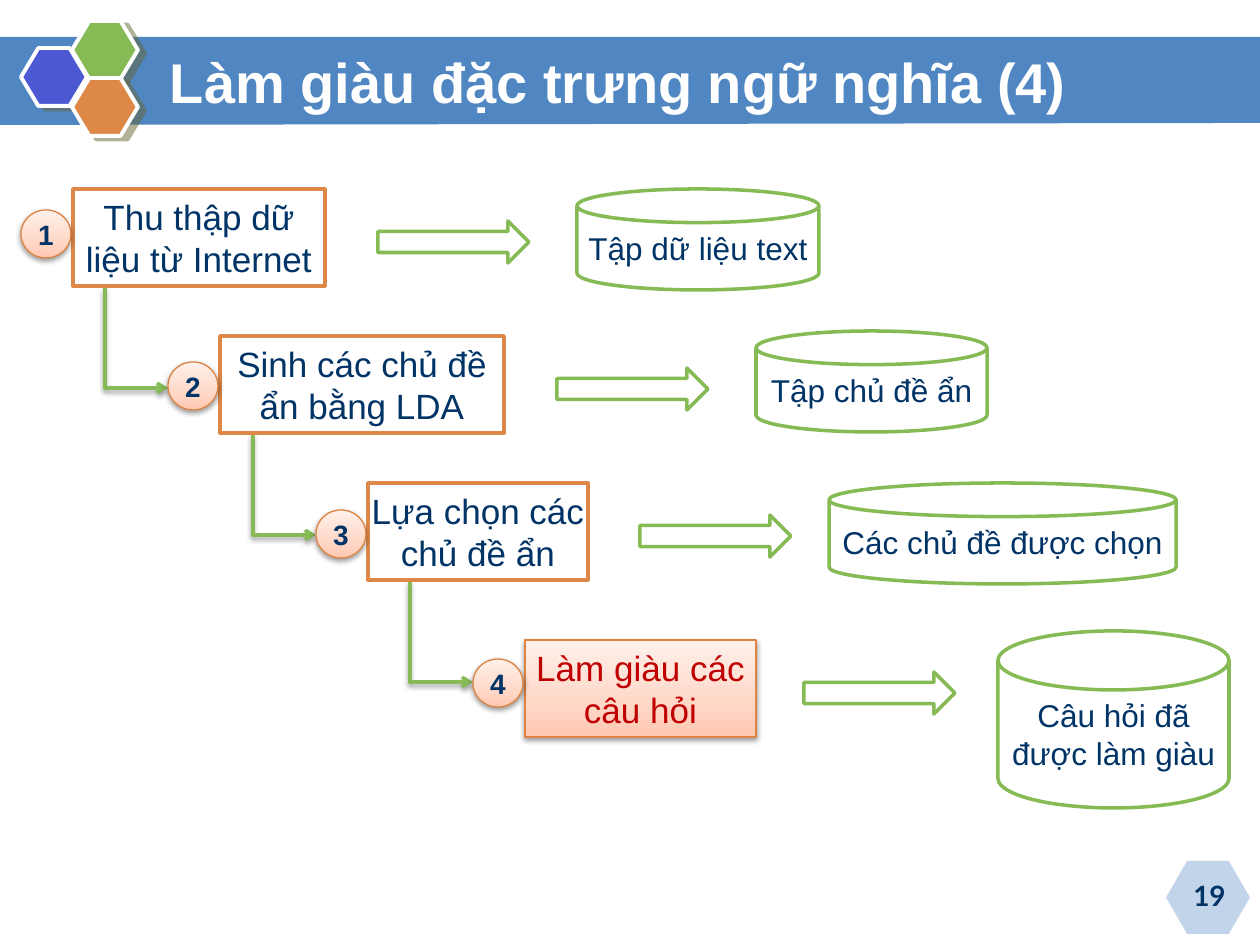
from copy import deepcopy

from lxml.etree import SubElement
from pptx import Presentation
from pptx.dml.color import RGBColor
from pptx.enum.shapes import MSO_CONNECTOR, MSO_SHAPE
from pptx.enum.text import MSO_ANCHOR, PP_ALIGN
from pptx.oxml.ns import qn
from pptx.util import Pt

PX = 914400 / 126

WHITE = RGBColor(0xFF, 0xFF, 0xFF)
NAVY = RGBColor(0x00, 0x33, 0x66)
BLUE = RGBColor(0x50, 0x86, 0xC2)
INDIGO = RGBColor(0x4C, 0x59, 0xD2)
GREEN = RGBColor(0x85, 0xBA, 0x54)
ORANGE = RGBColor(0xDE, 0x88, 0x48)
DARK_ORANGE = RGBColor(0xDD, 0x84, 0x43)
RED = RGBColor(0xC0, 0x00, 0x00)
PEACH_STOPS = [
    (0, RGBColor(0xFF, 0xC8, 0xB1)),
    (0.35, RGBColor(0xFF, 0xD8, 0xC8)),
    (1, RGBColor(0xFF, 0xF0, 0xEA)),
]
LOGO_SHADOW = ("666633", 50, 0, 4.5, 27)
SOFT_SHADOW = ("000000", 38, 3.1, 1.6, 90)

TITLE = "Làm giàu đặc trưng ngữ nghĩa (4)"
PAGE_NUMBER = "19"
BANNER = [(-1, 37), (1260, 37), (1260, 123), (-1, 125)]
HEXAGONS = [(21, 48, INDIGO), (72, 21, GREEN), (72, 78, ORANGE)]
STEPS = [
    {"text": "Thu thập dữ liệu từ Internet", "box": (73, 189, 252), "badge_top": 210, "arrow_left": 378,
     "result": "Tập dữ liệu text", "disk": (577, 189, 242, 101)},
    {"text": "Sinh các chủ đề ẩn bằng LDA", "box": (220, 336, 284), "badge_top": 362, "arrow_left": 557,
     "result": "Tập chủ đề ẩn", "disk": (756, 331, 231, 101)},
    {"text": "Lựa chọn các chủ đề ẩn", "box": (368, 483, 220), "badge_top": 510, "arrow_left": 640,
     "result": "Các chủ đề được chọn", "disk": (829, 483, 347, 101)},
    {"text": "Làm giàu các câu hỏi", "box": (525, 640, 231), "badge_top": 659, "arrow_left": 804,
     "result": "Câu hỏi đã được làm giàu", "disk": (998, 631, 231, 177)},
]
BOX_HEIGHT = 97
BADGE_WIDTH, BADGE_HEIGHT, BADGE_OFFSET = 50, 48, 52
ARROW_WIDTH, ARROW_HEIGHT, ARROW_DROP = 151, 42, 32
ELBOW_WIDTH, ELBOW_HEIGHT, ELBOW_GAP = 63, 100, 2


def px(*values):
    return [round(value * PX) for value in values]


def add_shadow(shape, color, alpha, blur, distance, angle):
    properties = shape.element.spPr
    effects = properties.find(qn("a:effectLst"))
    if effects is None:
        effects = SubElement(properties, qn("a:effectLst"))
    shadow = SubElement(effects, qn("a:outerShdw"), blurRad=str(Pt(blur)), dist=str(Pt(distance)),
                        dir=str(angle * 60000), rotWithShape="0")
    shadow_color = SubElement(shadow, qn("a:srgbClr"), val=color)
    SubElement(shadow_color, qn("a:alpha"), val=str(alpha * 1000))


def style_shape(shape, fill, line=None, width=2):
    shape.shadow.inherit = False
    shape.fill.solid()
    shape.fill.fore_color.rgb = fill
    if line is None:
        shape.line.fill.background()
    else:
        shape.line.color.rgb = line
        shape.line.width = Pt(width)


def add_shape(kind, bounds, fill, line=None, width=2):
    shape = slide.shapes.add_shape(kind, *px(*bounds))
    style_shape(shape, fill, line, width)
    return shape


def make_peach(shape):
    shape.fill.gradient()
    shape.fill.gradient_angle = 90
    stop_list = shape.element.spPr.find(".//" + qn("a:gsLst"))
    stop_list.append(deepcopy(stop_list[0]))
    for stop, (position, color) in zip(shape.fill.gradient_stops, PEACH_STOPS):
        stop.position = position
        stop.color.rgb = color
    shape.line.color.rgb = DARK_ORANGE
    shape.line.width = Pt(0.75)
    add_shadow(shape, *SOFT_SHADOW)


def write(shape, text, size, color=NAVY, bold=False, font="Arial", align=PP_ALIGN.CENTER,
          side=0, vertical=6):
    frame = shape.text_frame
    frame.text = text
    frame.word_wrap = True
    frame.vertical_anchor = MSO_ANCHOR.MIDDLE
    frame.margin_left, frame.margin_right, frame.margin_top, frame.margin_bottom = px(
        side, side, vertical, vertical)
    paragraph = frame.paragraphs[0]
    paragraph.alignment = align
    run_font = paragraph.runs[0].font
    run_font.name = font
    run_font.size = Pt(size)
    run_font.bold = bold
    run_font.color.rgb = color


def add_elbow(left, top):
    middle_x, middle_y = left + ELBOW_WIDTH / 2, top + ELBOW_HEIGHT / 2
    half_long, half_short = ELBOW_HEIGHT / 2, ELBOW_WIDTH / 2
    connector = slide.shapes.add_connector(
        MSO_CONNECTOR.ELBOW,
        *px(middle_x + half_long, middle_y - half_short, middle_x - half_long, middle_y + half_short))
    connector.line.color.rgb = GREEN
    connector.line.width = Pt(2)
    properties = connector.element.spPr
    properties.find(qn("a:xfrm")).set("rot", "16200000")
    properties.find(qn("a:prstGeom")).set("prst", "bentConnector2")
    SubElement(properties.find(qn("a:ln")), qn("a:tailEnd"), type="arrow")
    add_shadow(connector, *SOFT_SHADOW)


presentation = Presentation()
presentation.slide_width, presentation.slide_height = px(1260, 945)
slide = presentation.slides.add_slide(presentation.slide_layouts[6])

builder = slide.shapes.build_freeform(*BANNER[0], scale=PX)
builder.add_line_segments(BANNER[1:], close=True)
style_shape(builder.convert_to_shape(), BLUE)

page_hexagon = add_shape(MSO_SHAPE.HEXAGON, (1166, 861, 84, 73), BLUE)
page_hexagon.adjustments[0] = 0.29
page_color = page_hexagon.element.spPr.find(".//" + qn("a:srgbClr"))
SubElement(page_color, qn("a:alpha"), val="35000")

for left, top, color in HEXAGONS:
    hexagon = add_shape(MSO_SHAPE.HEXAGON, (left, top, 66, 58), color, WHITE, 2.25)
    hexagon.adjustments[0] = 0.3
    add_shadow(hexagon, *LOGO_SHADOW)

page_box = slide.shapes.add_textbox(*px(1176, 872, 67, 47))
write(page_box, PAGE_NUMBER, 16, bold=True, font="Lato")
title_box = slide.shapes.add_textbox(*px(157, 42, 1081, 78))
write(title_box, TITLE, 32, WHITE, bold=True, align=PP_ALIGN.LEFT, side=13)

for number, step in enumerate(STEPS, 1):
    is_last = number == len(STEPS)
    left, top, width = step["box"]
    if not is_last:
        next_badge_left = STEPS[number]["box"][0] - BADGE_OFFSET
        add_elbow(next_badge_left - ELBOW_WIDTH, top + BOX_HEIGHT + ELBOW_GAP)

    disk = add_shape(MSO_SHAPE.FLOWCHART_MAGNETIC_DISK, step["disk"], WHITE, GREEN)
    write(disk, step["result"], 18)
    add_shape(MSO_SHAPE.RIGHT_ARROW,
              (step["arrow_left"], top + ARROW_DROP, ARROW_WIDTH, ARROW_HEIGHT), WHITE, GREEN)

    box = add_shape(MSO_SHAPE.RECTANGLE, (left, top, width, BOX_HEIGHT), WHITE, ORANGE)
    if is_last:
        make_peach(box)
    write(box, step["text"], 20, RED if is_last else NAVY)

    badge = add_shape(MSO_SHAPE.OVAL,
                      (left - BADGE_OFFSET, step["badge_top"], BADGE_WIDTH, BADGE_HEIGHT), WHITE)
    make_peach(badge)
    write(badge, str(number), 16, bold=True, vertical=0)

presentation.save("out.pptx")
